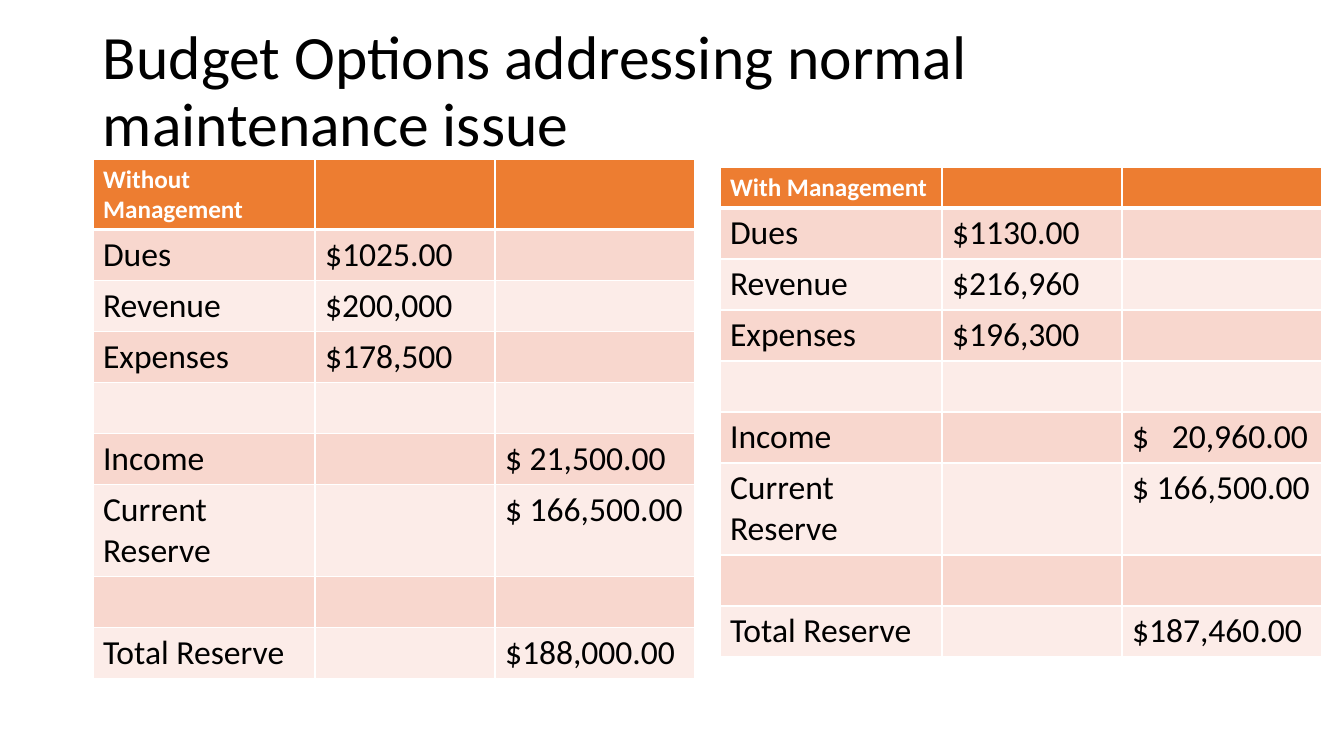
from lxml import etree
from pptx import Presentation
from pptx.dml.color import RGBColor
from pptx.enum.text import MSO_ANCHOR
from pptx.oxml.ns import qn
from pptx.util import Pt

MIDDLE = MSO_ANCHOR.MIDDLE
PX = 914400 / 100.8
THEME = {
    "font": "Calibri",
    "ink": "000000",
    "white": "FFFFFF",
    "head": "ED7D31",
    "bands": ["FCECE8", "F8D7CE"],
    "title": 44,
    "label": 18,
    "body": 24,
}
COLS = [222, 180, 200]
LINE, TALL = 51, 92
PLANS = [
    (93, 159, 70, "Without  Management",
     ["$1025.00", "$200,000", "$178,500"],
     ["$ 21,500.00", "$ 166,500.00", "$188,000.00"]),
    (720, 167, 41, "With Management",
     ["$1130.00", "$216,960", "$196,300"],
     ["$   20,960.00", "$ 166,500.00", "$187,460.00"]),
]


def px(*sizes):
    return [round(size * PX) for size in sizes]


def write(para, text, size, color, bold=False):
    run = para.add_run()
    run.text = text
    font = run.font
    font.name = THEME["font"]
    font.size = Pt(size)
    font.bold = bold
    font.color.rgb = RGBColor.from_string(color)


deck = Presentation()
deck.slide_width, deck.slide_height = px(1344, 756)
slide = deck.slides.add_slide(deck.slide_layouts[6])

frame = slide.shapes.add_textbox(*px(93, 20, 1159, 146)).text_frame
frame.word_wrap = True
frame.vertical_anchor = MIDDLE
para = frame.paragraphs[0]
para.line_spacing = 0.9
write(para, "Budget Options addressing normal maintenance issue",
      THEME["title"], THEME["ink"])

for left, top, head, name, rates, sums in PLANS:
    rows = [
        [name, "", ""],
        ["Dues", rates[0], ""],
        ["Revenue", rates[1], ""],
        ["Expenses", rates[2], ""],
        ["", "", ""],
        ["Income", "", sums[0]],
        ["Current Reserve", "", sums[1]],
        ["", "", ""],
        ["Total Reserve", "", sums[2]],
    ]
    highs = [head] + [LINE] * 5 + [TALL] + [LINE] * 2
    box = px(left, top, sum(COLS), sum(highs))
    table = slide.shapes.add_table(len(rows), len(COLS), *box).table
    for col, wide in zip(table.columns, px(*COLS)):
        col.width = wide
    for r, (row, high) in enumerate(zip(rows, px(*highs))):
        table.rows[r].height = high
        for c, text in enumerate(row):
            cell = table.cell(r, c)
            props = cell._tc.get_or_add_tcPr()
            for side in "LRTB":
                thick = (r, side) in [(0, "B"), (1, "T")]
                edge = etree.SubElement(props, qn("a:ln" + side),
                                        w=str(Pt(3 if thick else 1)))
                paint = etree.SubElement(edge, qn("a:solidFill"))
                etree.SubElement(paint, qn("a:srgbClr"), val=THEME["white"])
            fill = THEME["bands"][r % 2] if r else THEME["head"]
            cell.fill.solid()
            cell.fill.fore_color.rgb = RGBColor.from_string(fill)
            if text:
                size = THEME["body" if r else "label"]
                color = THEME["ink" if r else "white"]
                write(cell.text_frame.paragraphs[0], text, size, color, r == 0)

deck.save("out.pptx")
